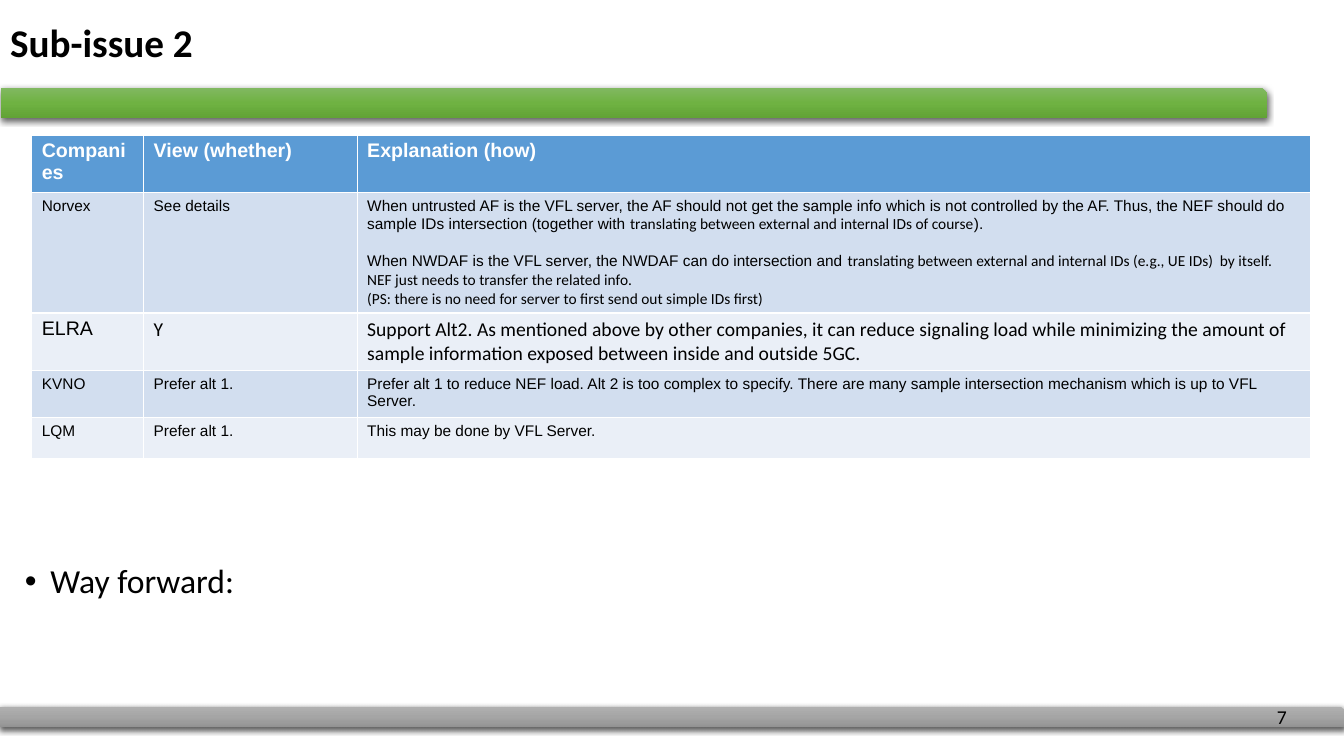
from copy import deepcopy
from dataclasses import dataclass

from lxml.etree import SubElement
from pptx import Presentation
from pptx.dml.color import RGBColor
from pptx.enum.shapes import MSO_SHAPE
from pptx.enum.text import MSO_ANCHOR, MSO_AUTO_SIZE, PP_ALIGN
from pptx.oxml.ns import qn
from pptx.util import Cm, Pt


@dataclass
class Bar:
    """A shaded band with one snipped corner."""
    left: float
    top: float
    width: float
    height: float
    stops: tuple[str, ...]


@dataclass
class Part:
    """A stretch of text in one font."""
    text: str
    font: str = "Arial"
    size: int = 11


@dataclass
class Row:
    """A table row: each cell holds paragraphs, each paragraph holds parts."""
    height: float
    fill: str
    cells: list[list[list[Part]]]
    ink: str = "000000"
    bold: bool = False


BARS = [
    Bar(0, 17.81, 33.88, 0.51, ("AFAFAF", "A5A5A5", "939393")),
    Bar(0.03, 2.21, 31.9, 0.76, ("81B861", "6FB242", "62A336")),
]
COLS = (2.82, 5.38, 24.03)
BLUE, DARK, PALE = "5B9BD5", "D2DEEF", "EAEFF7"


def line(text: str, font: str = "Arial", size: int = 11) -> list[list[Part]]:
    """Return a cell of one plain paragraph."""
    return [[Part(text, font, size)]]


DETAIL = [
    [Part("When untrusted AF is the VFL server, the AF should not get the sample info which is not "
          "controlled by the AF. Thus, the NEF should do sample IDs intersection (together with "),
     Part("translating between external and internal IDs of course", "Calibri"),
     Part(").")],
    [Part("When NWDAF is the VFL server, the NWDAF can do intersection and "),
     Part("translating between external and internal IDs (e.g., UE IDs)  by itself. "
          "NEF just needs to transfer the related info.", "Calibri")],
    [Part("(PS: there is no need for server to first send out simple IDs first)", "Calibri")],
]
ROWS = [
    Row(1.17, BLUE, [line("Companies", size=14), line("View (whether)", size=14),
                     line("Explanation (how)", size=14)], "FFFFFF", True),
    Row(1.12, DARK, [line("Norvex"), line("See details"), DETAIL]),
    Row(1.12, PALE, [line("ELRA", size=14), line("Y", "Calibri", 14),
                     line("Support Alt2. As mentioned above by other companies, it can reduce "
                          "signaling load while minimizing the amount of sample information "
                          "exposed between inside and outside 5GC.", "Calibri", 14)]),
    Row(0.94, DARK, [line("KVNO"), line("Prefer alt 1."),
                     line("Prefer alt 1 to reduce NEF load. Alt 2 is too complex to specify. There "
                          "are many sample intersection mechanism which is up to VFL Server.")]),
    Row(1.04, PALE, [line("LQM"), line("Prefer alt 1."), line("This may be done by VFL Server.")]),
]


def tint(code: str) -> RGBColor:
    """Turn a hex string into a colour."""
    return RGBColor.from_string(code)


def style(run, font: str, size: int, ink: str = "000000", bold: bool = False) -> None:
    """Format one run."""
    run.font.name = font
    run.font.size = Pt(size)
    run.font.bold = bold
    run.font.color.rgb = tint(ink)


def draw_bar(slide, bar: Bar) -> None:
    """Draw a shaded band with a soft shadow."""
    shape = slide.shapes.add_shape(MSO_SHAPE.SNIP_1_RECTANGLE, Cm(bar.left), Cm(bar.top),
                                   Cm(bar.width), Cm(bar.height))
    shape.fill.gradient()
    shape.fill.gradient_angle = 270
    stops = shape._element.spPr.find(".//" + qn("a:gsLst"))
    stops.append(deepcopy(stops[-1]))
    for i, (stop, code) in enumerate(zip(shape.fill.gradient_stops, bar.stops)):
        stop.position = i / 2
        stop.color.rgb = tint(code)
    shape.line.fill.background()
    shape.shadow.inherit = False
    effect = shape._element.spPr.find(qn("a:effectLst"))
    shade = SubElement(effect, qn("a:outerShdw"), blurRad=str(Pt(4.5)), dist=str(Pt(1.5)),
                       dir="5400000", algn="ctr", rotWithShape="0")
    ink = SubElement(shade, qn("a:srgbClr"), val="000000")
    SubElement(ink, qn("a:alpha"), val="63000")


def draw_text(slide, text: str, left: float, top: float, width: float, height: float, size: int):
    """Draw a one-line text box and return its paragraph."""
    frame = slide.shapes.add_textbox(Cm(left), Cm(top), Cm(width), Cm(height)).text_frame
    frame.word_wrap = True
    frame.text = text
    para = frame.paragraphs[0]
    style(para.runs[0], "Calibri", size)
    return para


def draw_title(slide, text: str) -> None:
    """Place and format the title."""
    title = slide.shapes.title
    title.left, title.top, title.width, title.height = Cm(0), Cm(0), Cm(29.21), Cm(2.26)
    frame = title.text_frame
    frame.text = text
    frame.auto_size = MSO_AUTO_SIZE.NONE
    frame.vertical_anchor = MSO_ANCHOR.MIDDLE
    para = frame.paragraphs[0]
    para.alignment = PP_ALIGN.LEFT
    para.line_spacing = 0.9
    style(para.runs[0], "Calibri", 28, bold=True)


def fill_cell(cell, row: Row, paras: list[list[Part]]) -> None:
    """Write and format one table cell."""
    cell.fill.solid()
    cell.fill.fore_color.rgb = tint(row.fill)
    frame = cell.text_frame
    for i, parts in enumerate(paras):
        para = frame.add_paragraph() if i else frame.paragraphs[0]
        if i == 1:
            para.space_before = Pt(13)
        for part in parts:
            run = para.add_run()
            run.text = part.text
            style(run, part.font, part.size, row.ink, row.bold)


def draw_table(slide) -> None:
    """Draw the table of views."""
    high = sum(row.height for row in ROWS)
    table = slide.shapes.add_table(len(ROWS), len(COLS), Cm(0.8), Cm(3.4),
                                   Cm(sum(COLS)), Cm(high)).table
    for col, width in zip(table.columns, COLS):
        col.width = Cm(width)
    for i, row in enumerate(ROWS):
        table.rows[i].height = Cm(row.height)
        for j, paras in enumerate(row.cells):
            fill_cell(table.cell(i, j), row, paras)


def main() -> None:
    """Build and save the slide."""
    deck = Presentation()
    deck.slide_width, deck.slide_height = Cm(33.87), Cm(19.05)
    slide = deck.slides.add_slide(deck.slide_layouts[5])
    for bar in BARS:
        draw_bar(slide, bar)
    draw_text(slide, "7", 31.93, 17.65, 1.09, 0.86, 14)
    draw_title(slide, "Sub-issue 2")
    draw_table(slide)
    para = draw_text(slide, "Way forward:", 0.38, 14.1, 30.73, 1.17, 24)
    para.line_spacing = 0.9
    para.space_before = Pt(10)
    props = para._p.get_or_add_pPr()
    props.set("marL", str(Cm(0.64)))
    props.set("indent", str(Cm(-0.64)))
    SubElement(props, qn("a:buFont"), typeface="Arial")
    SubElement(props, qn("a:buChar"), char="•")
    deck.save("out.pptx")


if __name__ == "__main__":
    main()
